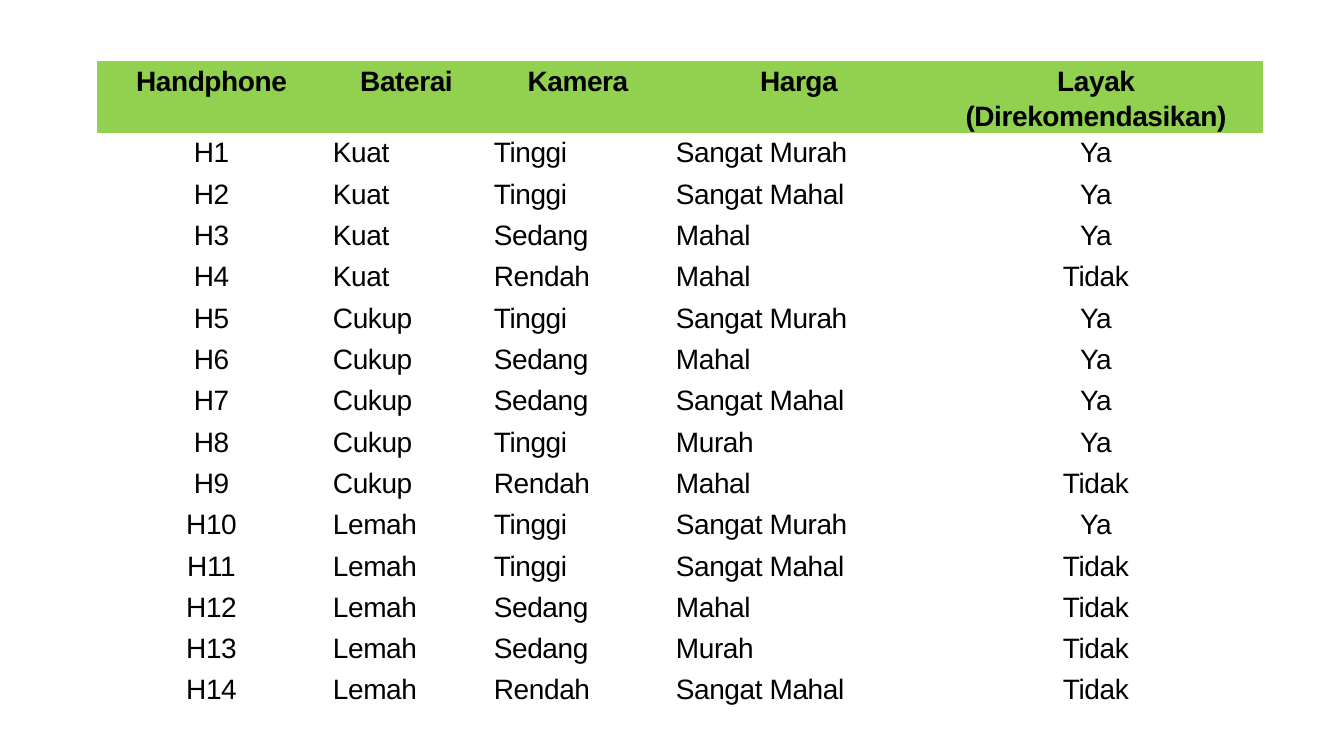
from pptx import Presentation
from pptx.dml.color import RGBColor
from pptx.enum.text import PP_ALIGN as Align
from pptx.util import Emu, Pt

PX = 914400 / 100.8
NO_STYLE = "{2D5ABB26-0587-4C30-8999-92F81FD0307C}"


def px(length):
    return Emu(round(length * PX))


def color(code):
    return RGBColor.from_string(code)


# Table content
header = ["Handphone", "Baterai", "Kamera", "Harga", "Layak (Direkomendasikan)"]
phones = [
    ("Kuat", "Tinggi", "Sangat Murah", "Ya"),
    ("Kuat", "Tinggi", "Sangat Mahal", "Ya"),
    ("Kuat", "Sedang", "Mahal", "Ya"),
    ("Kuat", "Rendah", "Mahal", "Tidak"),
    ("Cukup", "Tinggi", "Sangat Murah", "Ya"),
    ("Cukup", "Sedang", "Mahal", "Ya"),
    ("Cukup", "Sedang", "Sangat Mahal", "Ya"),
    ("Cukup", "Tinggi", "Murah", "Ya"),
    ("Cukup", "Rendah", "Mahal", "Tidak"),
    ("Lemah", "Tinggi", "Sangat Murah", "Ya"),
    ("Lemah", "Tinggi", "Sangat Mahal", "Tidak"),
    ("Lemah", "Sedang", "Mahal", "Tidak"),
    ("Lemah", "Sedang", "Murah", "Tidak"),
    ("Lemah", "Rendah", "Sangat Mahal", "Tidak"),
]
rows = [header] + [[f"H{number}", *phone] for number, phone in enumerate(phones, 1)]
column_widths = [229, 161, 182, 260, 334]
body_alignments = [Align.CENTER] + [Align.JUSTIFY] * 3 + [Align.CENTER]

# Formats
cell_format = {"margin_left": px(7), "margin_right": px(7), "margin_top": 0, "margin_bottom": 0}
font_format = {"name": "Arial", "size": Pt(20)}

# Slide
presentation = Presentation()
presentation.slide_width, presentation.slide_height = px(1344), px(756)
slide = presentation.slides.add_slide(presentation.slide_layouts[6])

# Table without a style
shape = slide.shapes.add_table(
    len(rows), len(header), px(97), px(61), px(sum(column_widths)), px(620))
table = shape.table
table.first_row = True
table.horz_banding = False
table._tbl.tblPr.find("{*}tableStyleId").text = NO_STYLE
for column, width in zip(table.columns, column_widths):
    column.width = px(width)

# Cells
for row_index, row in enumerate(rows):
    is_header = row_index == 0
    for column_index, text in enumerate(row):
        cell = table.cell(row_index, column_index)
        for name, value in cell_format.items():
            setattr(cell, name, value)
        if is_header:
            cell.fill.solid()
            cell.fill.fore_color.rgb = color("92D050")
        else:
            cell.fill.background()

        paragraph = cell.text_frame.paragraphs[0]
        paragraph.alignment = Align.CENTER if is_header else body_alignments[column_index]
        paragraph.line_spacing = 1.15
        run = paragraph.add_run()
        run.text = text
        for name, value in font_format.items():
            setattr(run.font, name, value)
        run.font.bold = is_header
        run.font.color.rgb = color("000000")
        run._r.get_or_add_rPr().set("spc", "-30")

presentation.save("out.pptx")
